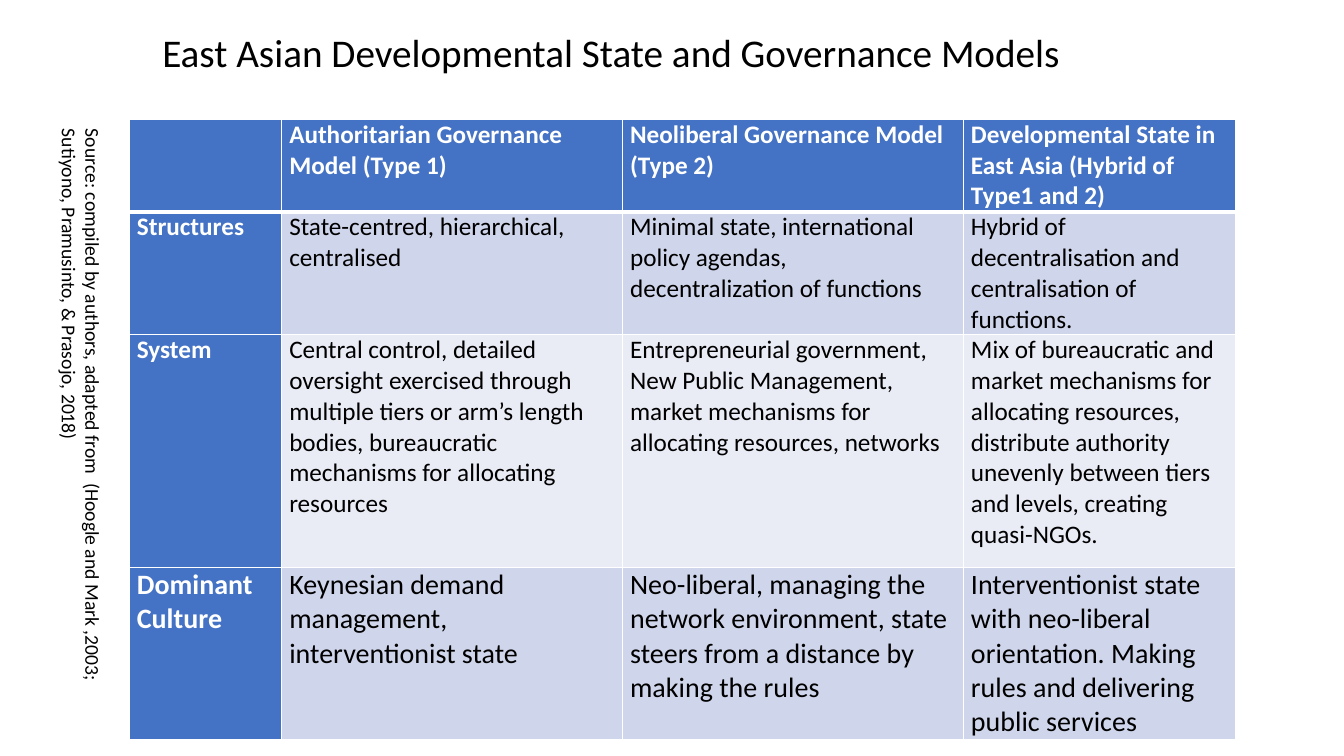
from lxml import etree
from pptx import Presentation
from pptx import util as u
from pptx.dml.color import RGBColor
from pptx.enum import text
from pptx.oxml.ns import qn

FONT = "Calibri"
WHITE, BLACK, BLUE = "FFFFFF", "000000", "4472C4"
BANDS = ["CFD5EA", "E9EBF5"]
COLUMN_WIDTHS = [3.84, 8.59, 8.59, 6.86]
ROW_HEIGHTS = [2.21, 2.92, 5.87, 3.66]
ROW_SIZES = [18, 18, 18, 20]
MODELS = [
    ["", "Authoritarian Governance Model (Type 1)",
     "Neoliberal Governance Model (Type 2)",
     "Developmental State in East Asia (Hybrid of Type1 and 2)"],
    ["Structures", "State-centred, hierarchical, centralised",
     "Minimal state, international policy agendas, decentralization of functions",
     "Hybrid of decentralisation and centralisation of functions."],
    ["System",
     "Central control, detailed oversight exercised through multiple tiers or "
     "arm’s length bodies, bureaucratic mechanisms for allocating resources",
     "Entrepreneurial government, New Public Management, market mechanisms for "
     "allocating resources, networks",
     "Mix of bureaucratic and market mechanisms for allocating resources, "
     "distribute authority unevenly between tiers and levels, creating quasi-NGOs."],
    ["Dominant Culture", "Keynesian demand management, interventionist state",
     "Neo-liberal, managing the network environment, state steers from a "
     "distance by making the rules",
     "Interventionist state with neo-liberal orientation. Making rules and "
     "delivering public services"],
]


def colour(value):
    return RGBColor.from_string(value)


def add_span(para, words, size, shade, bold=False):
    span = para.add_run()
    span.text = words
    span.font.name = FONT
    span.font.size = u.Pt(size)
    span.font.bold = bold
    span.font.color.rgb = colour(shade)


def add_text(page, left, top, width, height, words, size, vertical=False):
    box = page.shapes.add_textbox(u.Cm(left), u.Cm(top), u.Cm(width), u.Cm(height))
    frame = box.text_frame
    frame.word_wrap = True
    frame.auto_size = text.MSO_AUTO_SIZE.SHAPE_TO_FIT_TEXT
    if vertical:
        box.element.find(".//" + qn("a:bodyPr")).set("vert", "vert")
    add_span(frame.paragraphs[0], words, size, BLACK)


def add_borders(cell, top, bottom):
    properties = cell.fill._xPr
    for side, points in (("L", 1), ("R", 1), ("T", top), ("B", bottom)):
        line = etree.SubElement(properties, qn("a:ln" + side), w=str(u.Pt(points)))
        fill = etree.SubElement(line, qn("a:solidFill"))
        etree.SubElement(fill, qn("a:srgbClr"), val=WHITE)


def fill_cell(cell, row, column, words):
    heading = row == 0 or column == 0
    # Borders come before the fill, with a thick rule under the header
    add_borders(cell, top=3 if row == 1 else 1, bottom=3 if row == 0 else 1)
    cell.fill.solid()
    cell.fill.fore_color.rgb = colour(BLUE if heading else BANDS[(row - 1) % 2])
    cell.margin_left = cell.margin_right = u.Cm(0.19)
    cell.margin_top = cell.margin_bottom = u.Cm(0)
    if words:
        add_span(cell.text_frame.paragraphs[0], words, ROW_SIZES[row],
                 WHITE if heading else BLACK, heading)


def add_models_table(page, left, top):
    frame = page.shapes.add_table(
        len(ROW_HEIGHTS), len(COLUMN_WIDTHS), u.Cm(left), u.Cm(top),
        u.Cm(sum(COLUMN_WIDTHS)), u.Cm(sum(ROW_HEIGHTS)))
    table = frame.table
    for column, width in zip(table.columns, COLUMN_WIDTHS):
        column.width = u.Cm(width)
    for row, height in zip(table.rows, ROW_HEIGHTS):
        row.height = u.Cm(height)
    for row, entries in enumerate(MODELS):
        for column, words in enumerate(entries):
            fill_cell(table.cell(row, column), row, column, words)


def main():
    deck = Presentation()
    deck.slide_width, deck.slide_height = u.Cm(33.87), u.Cm(19.05)
    page = deck.slides.add_slide(deck.slide_layouts[6])
    # Comparison of models
    add_models_table(page, 3.26, 3.01)
    # Title
    add_text(page, 3.84, 0.6, 27.05, 1.45,
             "East Asian Developmental State and Governance Models", 28)
    # Source note down the left side
    add_text(page, 1.07, 3, 1.7, 15.44,
             "Source: compiled by authors, adapted from  (Hoogle and Mark ,2003; "
             "Sutiyono, Pramusinto, & Prasojo, 2018)", 14, vertical=True)
    deck.save("out.pptx")


if __name__ == "__main__":
    main()
